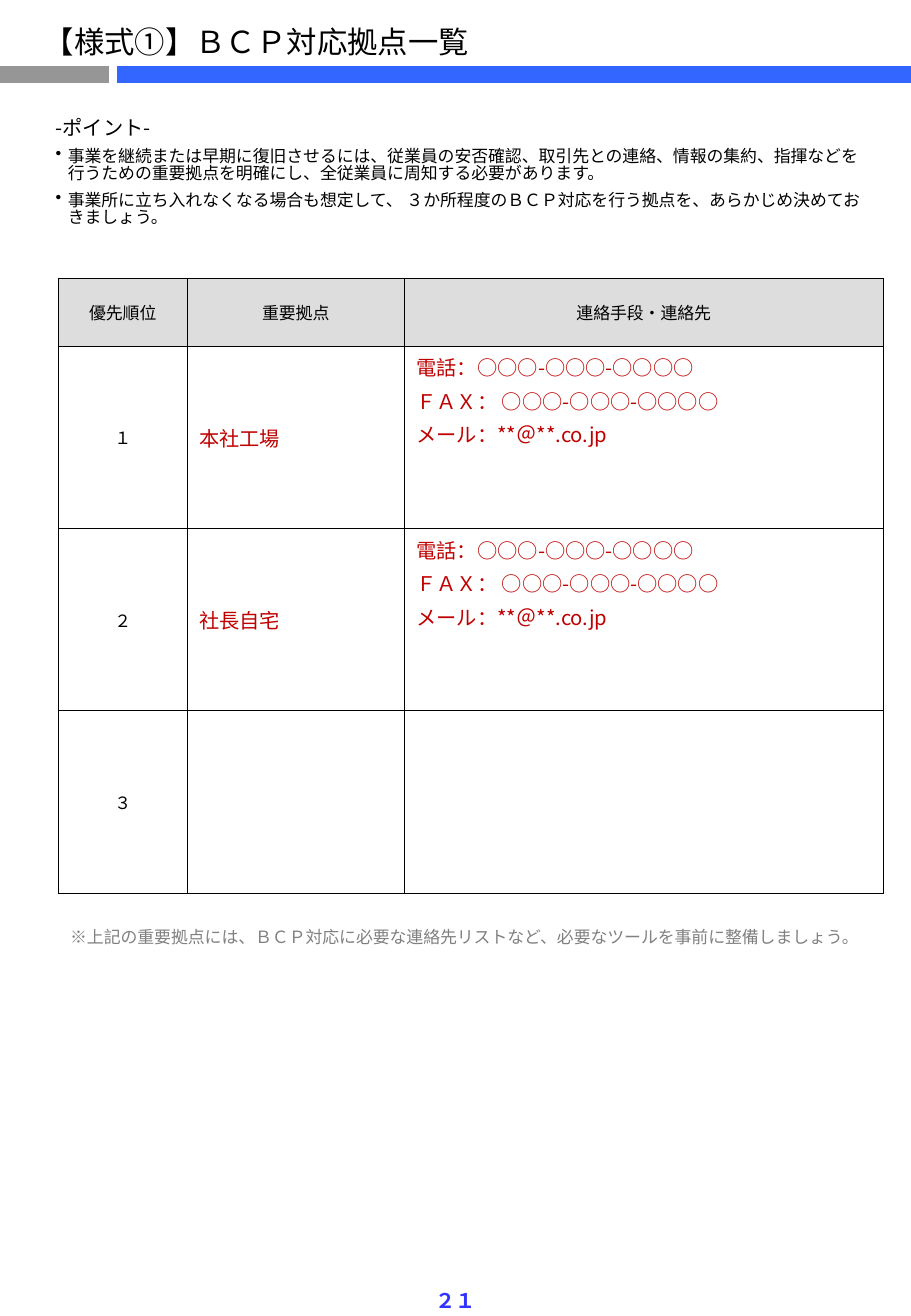
import pptx
import pptx.util
import pptx.dml.color
import pptx.enum.text
import pptx.enum.shapes
import lxml.etree
import pptx.oxml.ns

Inches, Pt = pptx.util.Inches, pptx.util.Pt
ALIGN, ANCHOR = pptx.enum.text.PP_ALIGN, pptx.enum.text.MSO_ANCHOR
qn = pptx.oxml.ns.qn
FONT = "Noto Sans CJK JP"


def color(code):
    return pptx.dml.color.RGBColor.from_string(code)


def write(frame, lines, size, code="000000", bold=False, **form):
    """Fill a text frame, one paragraph a line; form sets paragraph attributes."""
    for i, line in enumerate(lines):
        para = frame.add_paragraph() if i else frame.paragraphs[0]
        for name, value in form.items():
            setattr(para, name, value)
        run = para.add_run()
        run.text = line
        for name, value in {"name": FONT, "size": Pt(size), "bold": bold}.items():
            setattr(run.font, name, value)
        run.font.color.rgb = color(code)
        east = lxml.etree.SubElement(run.font._element, qn("a:ea"))
        east.set("typeface", FONT)


deck = pptx.Presentation()
deck.slide_width, deck.slide_height = Inches(7.5), Inches(10.83)
slide = deck.slides.add_slide(deck.slide_layouts[5])
shapes = slide.shapes

# Header bars
for start, end, code in [(0, 0.9, "969696"), (0.96, 7.5, "3366FF")]:
    bar = shapes.add_connector(pptx.enum.shapes.MSO_CONNECTOR.STRAIGHT,
                               Inches(start), Inches(0.61), Inches(end), Inches(0.61))
    bar.line.color.rgb = color(code)
    bar.line.width = Pt(10)
    lxml.etree.SubElement(bar._element.spPr, qn("a:effectLst"))

# Title and text boxes
boxes = {
    "title": (0.26, 0.14, 3.74, 0.4),
    "points": (0.36, 0.93, 6.89, 1.14),
    "note": (0.48, 7.58, 6.77, 0.27),
    "page": (3.48, 10.55, 0.54, 0.31),
}
frames = {}
for name, place in boxes.items():
    box = shapes.title if name == "title" else shapes.add_textbox(0, 0, 0, 0)
    for side, value in zip(("left", "top", "width", "height"), place):
        setattr(box, side, Inches(value))
    frame = frames[name] = box.text_frame
    frame.auto_size = pptx.enum.text.MSO_AUTO_SIZE.NONE
    frame.vertical_anchor = ANCHOR.TOP
    frame.word_wrap = name in ("points", "note")

write(frames["title"], ["【様式①】ＢＣＰ対応拠点一覧"], 18, alignment=ALIGN.LEFT)
write(frames["note"], ["※上記の重要拠点には、ＢＣＰ対応に必要な連絡先リストなど、必要なツールを事前に整備しましょう。"],
      10, "808080")
write(frames["page"], ["２１"], 12, "3333FF", True, alignment=ALIGN.CENTER)

# Points
points = [
    "-ポイント-",
    "事業を継続または早期に復旧させるには、従業員の安否確認、取引先との連絡、情報の集約、指揮などを行うための重要拠点を明確にし、全従業員に周知する必要があります。",
    "事業所に立ち入れなくなる場合も想定して、 ３か所程度のＢＣＰ対応を行う拠点を、あらかじめ決めておきましょう。",
]
write(frames["points"], points, 10, space_after=Pt(6), line_spacing=0.83)
for i, para in enumerate(frames["points"].paragraphs):
    props = para._p.get_or_add_pPr()
    props.set("marL", str(Inches(0.1)))
    props.set("indent", str(-Inches(0.1)))
    if i:
        lxml.etree.SubElement(props, qn("a:buChar")).set("char", "•")
    else:
        para.runs[0].font.size = Pt(12)

# Table of sites
contact = ["電話：○○○-○○○-○○○○", "ＦＡＸ： ○○○-○○○-○○○○", "メール：**＠**.co.jp"]
rows = [
    [["優先順位"], ["重要拠点"], ["連絡手段・連絡先"]],
    [["１"], ["本社工場"], contact],
    [["２"], ["社長自宅"], contact],
    [["３"], [], []],
]
table = shapes.add_table(4, 3, Inches(0.48), Inches(2.29), Inches(6.79), Inches(5.06)).table
table.first_row = table.horz_banding = False
for col, width in zip(table.columns, (1.06, 1.79, 3.94)):
    col.width = Inches(width)
for r, row in enumerate(rows):
    table.rows[r].height = Inches(1.5 if r else 0.56)
    for c, lines in enumerate(row):
        cell = table.cell(r, c)
        cell.vertical_anchor = ANCHOR.TOP if r and c == 2 else ANCHOR.MIDDLE
        props = cell._tc.get_or_add_tcPr()
        for side in ("lnL", "lnR", "lnT", "lnB"):
            edge = lxml.etree.SubElement(props, qn("a:" + side), w=str(Pt(0.5)))
            fill = lxml.etree.SubElement(edge, qn("a:solidFill"))
            lxml.etree.SubElement(fill, qn("a:srgbClr"), val="000000")
        if r:
            cell.fill.background()
        else:
            cell.fill.solid()
            cell.fill.fore_color.rgb = color("DDDDDD")
        if r and c:
            write(cell.text_frame, lines, 12, "C00000", space_before=Pt(2.4))
        else:
            write(cell.text_frame, lines, 10, space_before=Pt(2), alignment=ALIGN.CENTER)

deck.save("out.pptx")
